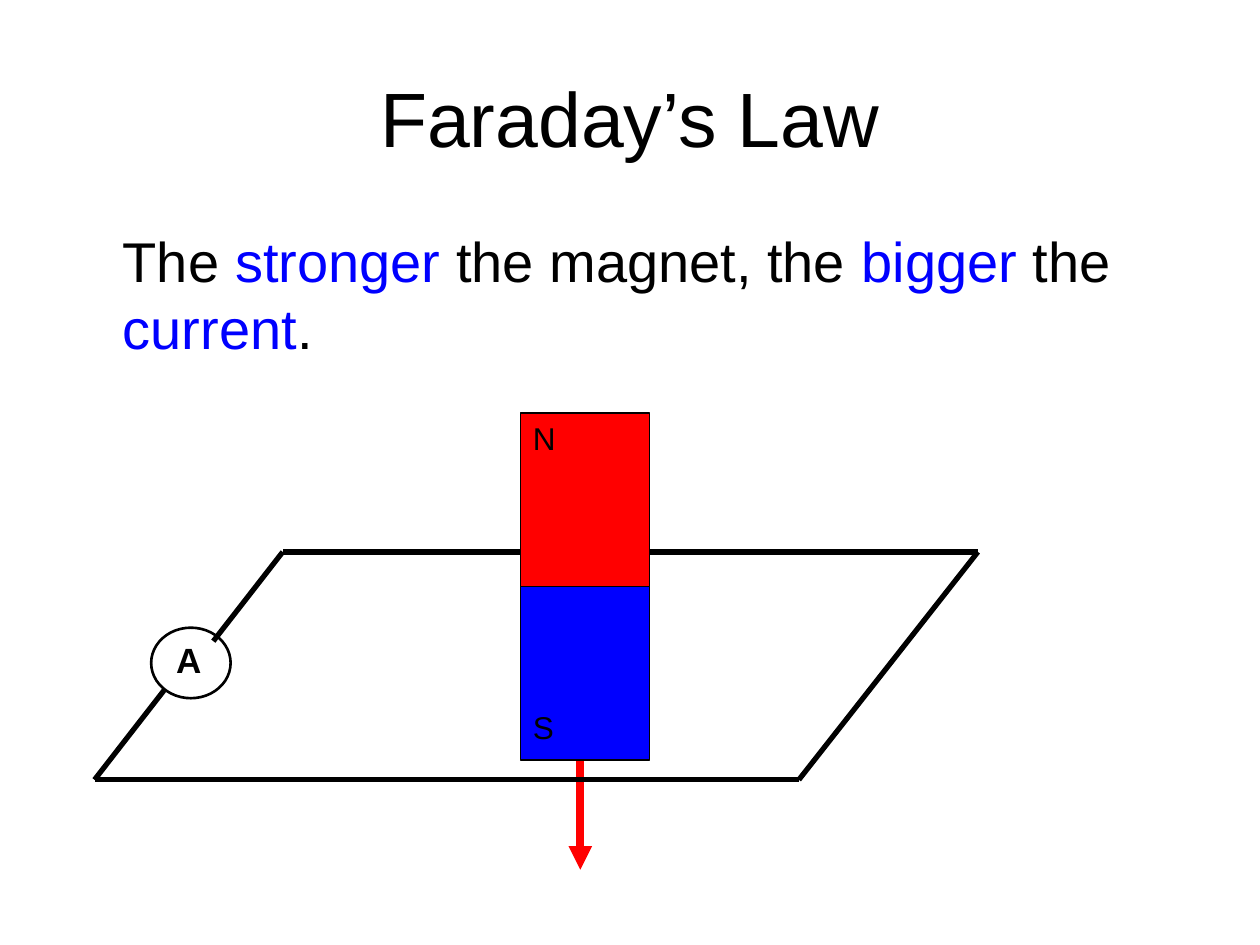
from dataclasses import dataclass

from lxml import etree
from pptx import Presentation
from pptx.dml.color import RGBColor
from pptx.enum.shapes import MSO_CONNECTOR, MSO_SHAPE
from pptx.enum.text import MSO_ANCHOR, PP_ALIGN
from pptx.oxml.ns import qn
from pptx.util import Pt

STRAIGHT = MSO_CONNECTOR.STRAIGHT
RECT, OVAL = MSO_SHAPE.RECTANGLE, MSO_SHAPE.OVAL
TOP, MIDDLE = MSO_ANCHOR.TOP, MSO_ANCHOR.MIDDLE
LEFT, CENTER = PP_ALIGN.LEFT, PP_ALIGN.CENTER


@dataclass(frozen=True)
class Theme:
    font: str = "Arial"
    black: str = "000000"
    red: str = "FF0000"
    blue: str = "0000FF"
    title: float = 44
    body: float = 32
    meter: float = 20
    pole: float = 18
    wire: float = 3
    motion: float = 4.5
    outline: float = 0.75
    meter_outline: float = 1.5


THEME = Theme()


@dataclass(frozen=True)
class Box:
    left: float
    top: float
    width: float
    height: float

    def emu(self) -> list[int]:
        return [Pt(v) for v in (self.left, self.top, self.width, self.height)]


@dataclass(frozen=True)
class Label:
    box: Box
    runs: tuple[tuple[str, str], ...]
    size: float
    bold: bool = False
    align: PP_ALIGN = LEFT
    anchor: MSO_ANCHOR = TOP
    indent: float = 0


@dataclass(frozen=True)
class Line:
    start: tuple[float, float]
    end: tuple[float, float]
    color: str = THEME.black
    width: float = THEME.wire
    arrow: bool = False


@dataclass(frozen=True)
class Figure:
    kind: MSO_SHAPE
    box: Box
    fill: str | None
    width: float


def draw_label(shapes, label: Label) -> None:
    tf = shapes.add_textbox(*label.box.emu()).text_frame
    tf.word_wrap = True
    tf.vertical_anchor = label.anchor
    tf.margin_left = Pt(7.2 + label.indent)
    p = tf.paragraphs[0]
    p.alignment = label.align
    p.font.name = THEME.font
    p.font.size = Pt(label.size)
    p.font.bold = label.bold
    for text, color in label.runs:
        r = p.add_run()
        r.text = text
        r.font.color.rgb = RGBColor.from_string(color)


def draw_line(shapes, line: Line) -> None:
    s = shapes.add_connector(STRAIGHT, *map(Pt, line.start + line.end))
    s.line.color.rgb = RGBColor.from_string(line.color)
    s.line.width = Pt(line.width)
    if line.arrow:
        etree.SubElement(s.line._get_or_add_ln(), qn("a:tailEnd"), type="triangle")
    etree.SubElement(s._element.spPr, qn("a:effectLst"))


def draw_figure(shapes, figure: Figure) -> None:
    s = shapes.add_shape(figure.kind, *figure.box.emu())
    s.shadow.inherit = False
    if figure.fill:
        s.fill.solid()
        s.fill.fore_color.rgb = RGBColor.from_string(figure.fill)
    else:
        s.fill.background()
    s.line.color.rgb = RGBColor.from_string(THEME.black)
    s.line.width = Pt(figure.width)


TITLE = Label(Box(36, 21.6, 648, 90), (("Faraday’s Law", THEME.black),),
              THEME.title, align=CENTER, anchor=MIDDLE)
STATEMENT = Label(
    Box(36, 126, 648, 356.4),
    (
        ("The ", THEME.black), ("stronger", THEME.blue),
        (" the magnet, the", THEME.black), (" bigger ", THEME.blue),
        ("the ", THEME.black), ("current", THEME.blue), (".", THEME.black),
    ),
    THEME.body, indent=27,
)

MAGNET = Box(297.4, 236, 73.8, 198.4)
HALF = MAGNET.height / 2
LABEL_HEIGHT = 28.8
POLES = [
    Figure(RECT, Box(MAGNET.left, MAGNET.top + i * HALF, MAGNET.width, HALF),
           color, THEME.outline)
    for i, color in enumerate((THEME.red, THEME.blue))
]
POLE_LABELS = [
    Label(Box(MAGNET.left, top, MAGNET.width, LABEL_HEIGHT),
          ((name, THEME.black),), THEME.pole)
    for name, top in (
        ("N", MAGNET.top),
        ("S", MAGNET.top + MAGNET.height - 33.4),
    )
]

MOTION = Line((331.6, 434.4), (331.6, 497), THEME.red, THEME.motion, True)
BACK_LEFT, BACK_RIGHT = (161.6, 315.4), (558.8, 315.4)
FRONT_LEFT, FRONT_RIGHT = (54, 445.6), (456.5, 445.6)
WIRES = [
    Line((MAGNET.left, BACK_LEFT[1]), BACK_LEFT),
    Line((121.9, 366.4), BACK_LEFT),
    Line(FRONT_RIGHT, BACK_RIGHT),
    Line(FRONT_LEFT, (93.8, 394.4)),
    Line(FRONT_RIGHT, FRONT_LEFT),
    Line(BACK_RIGHT, (MAGNET.left + MAGNET.width, BACK_RIGHT[1])),
]
METER = Figure(OVAL, Box(86.4, 358.7, 45.4, 40.3), None, THEME.meter_outline)
METER_LABEL = Label(Box(93.6, 361.4, 45.4, 31), (("A", THEME.black),),
                    THEME.meter, bold=True)


def main() -> None:
    prs = Presentation()
    prs.slide_width, prs.slide_height = Pt(720), Pt(540)
    shapes = prs.slides.add_slide(prs.slide_layouts[6]).shapes
    draw_line(shapes, MOTION)
    for label in (TITLE, STATEMENT):
        draw_label(shapes, label)
    for pole in POLES:
        draw_figure(shapes, pole)
    for label in POLE_LABELS:
        draw_label(shapes, label)
    for wire in WIRES:
        draw_line(shapes, wire)
    draw_figure(shapes, METER)
    draw_label(shapes, METER_LABEL)
    prs.save("out.pptx")


if __name__ == "__main__":
    main()
